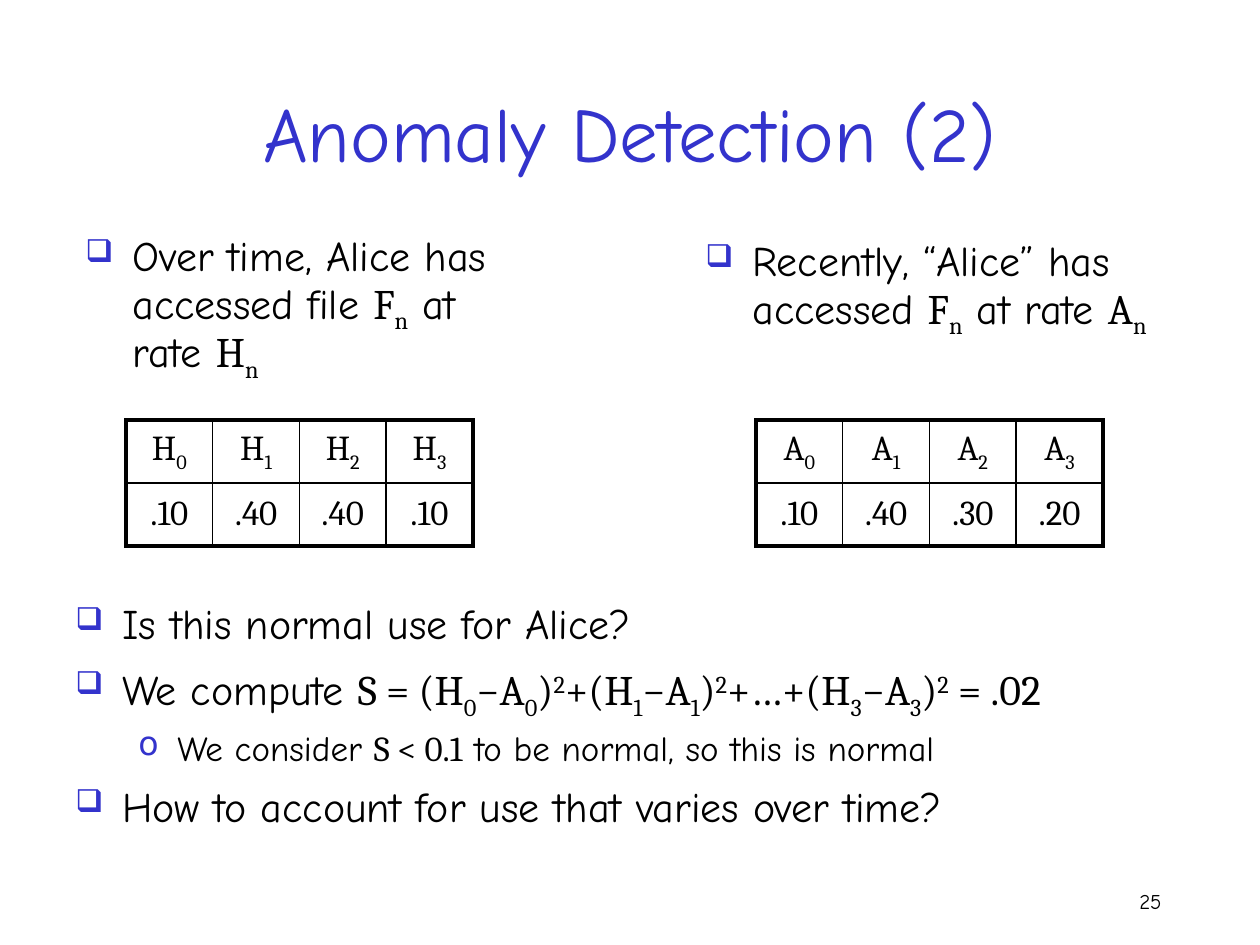
from dataclasses import dataclass

from lxml import etree
from pptx import Presentation
from pptx.dml.color import RGBColor
from pptx.enum.text import MSO_ANCHOR, PP_ALIGN
from pptx.oxml.ns import qn
from pptx.util import Emu, Pt

CENTER, RIGHT = PP_ALIGN.CENTER, PP_ALIGN.RIGHT
TOP, MIDDLE = MSO_ANCHOR.TOP, MSO_ANCHOR.MIDDLE
PX = 914400 / 126
SHIFTS = {"_": -25000, "^": 30000}


@dataclass(frozen=True)
class Theme:
    """Colours, fonts, type sizes and line widths of the slide."""
    accent: str = "3333CC"
    ink: str = "000000"
    prose: str = "Comic Neue"
    math: str = "Cambria"
    title: int = 44
    body: int = 24
    detail: int = 20
    footer: int = 12
    outer: float = 2.25
    inner: float = 1


@dataclass(frozen=True)
class Level:
    """Bullet style of one outline level, with lengths in px."""
    bullet: str
    scale: int
    margin: int
    hang: int
    size: int


THEME = Theme()
POINT = Level("❑", 75, 47, 47, THEME.body)
DETAIL = Level("o", 95, 102, 39, THEME.detail)


def px(length):
    """Turn px into EMU."""
    return Emu(round(length * PX))


def pieces(markup):
    """Yield text, font and baseline shift; $ encloses math, _ and ^ shift one character."""
    for index, segment in enumerate(markup.split("$")):
        if index % 2 == 0:
            if segment:
                yield segment, THEME.prose, 0
            continue
        for chunk in segment.replace("_", "|_").replace("^", "|^").split("|"):
            if chunk[:1] in SHIFTS:
                yield chunk[1], THEME.math, SHIFTS[chunk[0]]
                chunk = chunk[2:]
            if chunk:
                yield chunk, THEME.math, 0


def write(paragraph, markup, size, color=THEME.ink):
    """Fill a paragraph with formatted runs."""
    for text, font, shift in pieces(markup):
        run = paragraph.add_run()
        run.text = text
        run.font.name = font
        run.font.size = Pt(size)
        run.font.color.rgb = RGBColor.from_string(color)
        if shift:
            run.font._element.set("baseline", str(shift))


def add_frame(slide, box, anchor):
    """Add a wrapping text box and return its text frame."""
    frame = slide.shapes.add_textbox(*map(px, box)).text_frame
    frame.word_wrap = True
    frame.vertical_anchor = anchor
    return frame


def add_line(slide, box, text, size, color, align):
    """Add a single vertically centred line of text."""
    paragraph = add_frame(slide, box, MIDDLE).paragraphs[0]
    paragraph.alignment = align
    write(paragraph, text, size, color)


def set_bullet(paragraph, level):
    """Give a paragraph the indent and bullet of its level."""
    properties = paragraph._p.get_or_add_pPr()
    properties.set("marL", str(px(level.margin)))
    properties.set("indent", str(-px(level.hang)))
    color = etree.SubElement(properties, qn("a:buClr"))
    etree.SubElement(color, qn("a:srgbClr"), val=THEME.accent)
    etree.SubElement(properties, qn("a:buSzPct"), val=str(level.scale * 1000))
    etree.SubElement(properties, qn("a:buChar"), char=level.bullet)


def add_bullets(slide, box, items, space_after=0):
    """Add a bulleted list of level and markup pairs."""
    frame = add_frame(slide, box, TOP)
    for index, (level, markup) in enumerate(items):
        paragraph = frame.add_paragraph() if index else frame.paragraphs[0]
        paragraph.level = int(level is DETAIL)
        paragraph.line_spacing = 0.85
        paragraph.space_before = Pt(level.size * 0.2)
        paragraph.space_after = Pt(space_after)
        set_bullet(paragraph, level)
        write(paragraph, markup, level.size)


def set_borders(cell, outer_sides):
    """Draw the four cell borders, heavier on the outer sides."""
    properties = cell._tc.get_or_add_tcPr()
    for side in "LRTB":
        width = THEME.outer if side in outer_sides else THEME.inner
        line = etree.SubElement(properties, qn(f"a:ln{side}"), w=str(Pt(width)))
        fill = etree.SubElement(line, qn("a:solidFill"))
        etree.SubElement(fill, qn("a:srgbClr"), val=THEME.ink)


def add_rates(slide, box, symbol, rates):
    """Add a table of numbered symbols above their rates."""
    rows = [[f"{symbol}_{n}" for n in range(len(rates))], rates]
    table = slide.shapes.add_table(len(rows), len(rates), *map(px, box)).table
    table.first_row = table.horz_banding = False
    for r, row in enumerate(rows):
        for c, value in enumerate(row):
            cell = table.cell(r, c)
            edges = {"L": c == 0, "R": c == len(row) - 1,
                     "T": r == 0, "B": r == len(rows) - 1}
            set_borders(cell, [side for side in edges if edges[side]])
            cell.fill.background()
            cell.vertical_anchor = MIDDLE
            paragraph = cell.text_frame.paragraphs[0]
            paragraph.alignment = CENTER
            paragraph.space_before = Pt(THEME.detail * 0.2)
            write(paragraph, f"${value}$", THEME.detail)


def main():
    """Build and save the slide."""
    deck = Presentation()
    deck.slide_width, deck.slide_height = px(1260), px(945)
    slide = deck.slides.add_slide(deck.slide_layouts[6])

    add_line(slide, (84, 53, 1092, 158), "Anomaly Detection (2)",
             THEME.title, THEME.accent, CENTER)
    add_bullets(slide, (73, 231, 473, 168), [
        (POINT, "Over time, Alice has accessed file $F_n$ at rate $H_n$")])
    add_rates(slide, (126, 420, 347, 126), "H", [".10", ".40", ".40", ".10"])
    add_bullets(slide, (63, 599, 1166, 252), [
        (POINT, "Is this normal use for Alice?"),
        (POINT, "We compute $S = (H_0−A_0)^2+(H_1−A_1)^2+…+(H_3−A_3)^2 = .02$"),
        (DETAIL, "We consider $S < 0.1$ to be normal, so this is normal"),
        (POINT, "How to account for use that varies over time?"),
    ], space_after=6)
    add_bullets(slide, (693, 236, 473, 168), [
        (POINT, "Recently, “Alice” has accessed $F_n$ at rate $A_n$")])
    add_rates(slide, (756, 420, 347, 126), "A", [".10", ".40", ".30", ".20"])
    add_line(slide, (890, 876, 284, 50), "25", THEME.footer, THEME.ink, RIGHT)

    deck.save("out.pptx")


if __name__ == "__main__":
    main()
